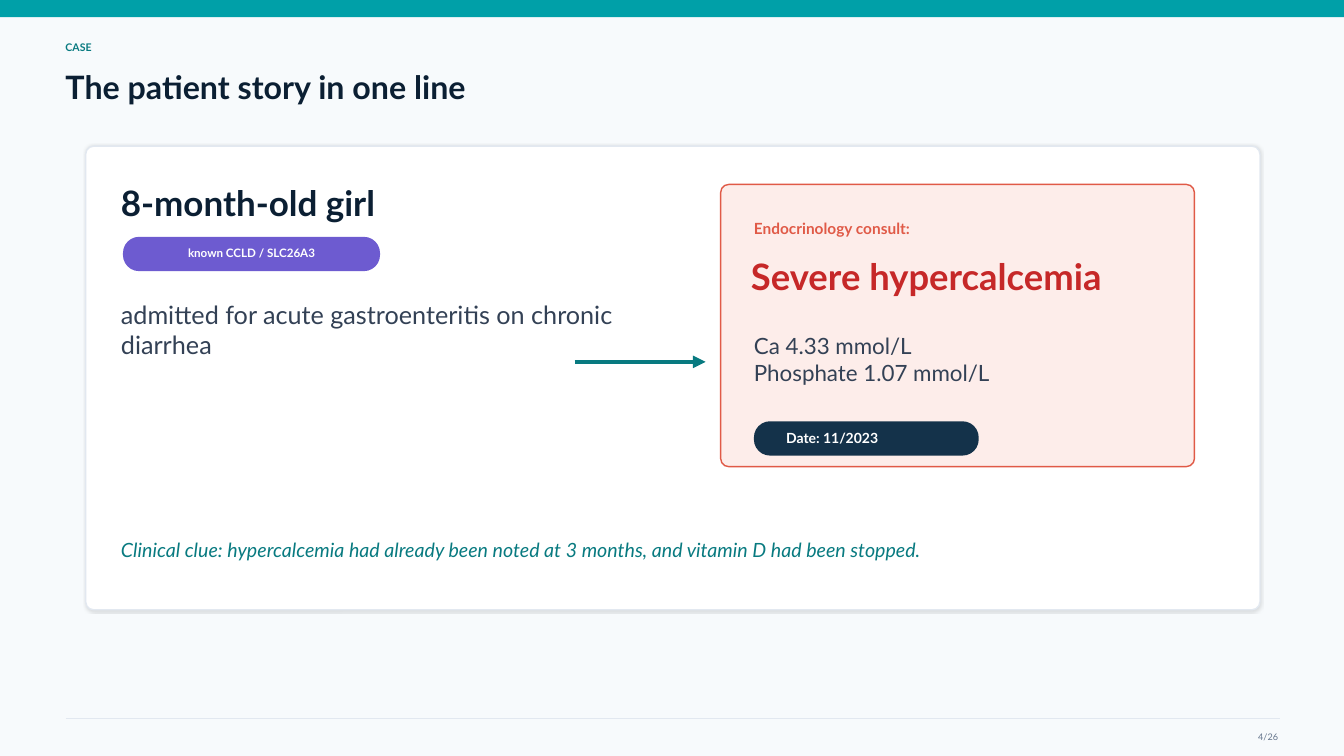
from lxml.etree import SubElement
from pptx import Presentation
from pptx.dml.color import RGBColor
from pptx.enum.shapes import MSO_CONNECTOR, MSO_SHAPE
from pptx.enum.text import MSO_ANCHOR, PP_ALIGN
from pptx.oxml.ns import qn
from pptx.util import Pt

FONT = "Lato"
PAPER = RGBColor(0xF7, 0xFA, 0xFC)
WHITE = RGBColor(0xFF, 0xFF, 0xFF)
AQUA = RGBColor(0x00, 0xA0, 0xA8)
TEAL = RGBColor(0x08, 0x7A, 0x80)
INK = RGBColor(0x0B, 0x1F, 0x33)
SLATE = RGBColor(0x33, 0x41, 0x55)
GRAY = RGBColor(0x64, 0x74, 0x8B)
RULE = RGBColor(0xE2, 0xE8, 0xF0)
PURPLE = RGBColor(0x6D, 0x5B, 0xD0)
NAVY = RGBColor(0x14, 0x32, 0x4A)
BLUSH = RGBColor(0xFD, 0xED, 0xEA)
CORAL = RGBColor(0xE0, 0x5A, 0x47)
RED = RGBColor(0xC6, 0x28, 0x28)


def add_text(slide, text, left, top, width, height, size, color,
             bold=False, italic=False, align=PP_ALIGN.LEFT):
    box = slide.shapes.add_textbox(Pt(left), Pt(top), Pt(width), Pt(height))
    frame = box.text_frame
    frame.word_wrap = True
    frame.vertical_anchor = MSO_ANCHOR.MIDDLE
    frame.margin_left = frame.margin_right = 0
    frame.margin_top = frame.margin_bottom = 0
    frame.text = text
    for para in frame.paragraphs:
        para.alignment = align
        font = para.font
        font.name, font.size = FONT, Pt(size)
        font.bold, font.italic = bold, italic
        font.color.rgb = color


def add_panel(slide, left, top, width, height, fill, line=None, radius=0):
    kind = MSO_SHAPE.ROUNDED_RECTANGLE if radius else MSO_SHAPE.RECTANGLE
    panel = slide.shapes.add_shape(kind, Pt(left), Pt(top), Pt(width), Pt(height))
    if radius:
        panel.adjustments[0] = radius / min(width, height)
    panel.fill.solid()
    panel.fill.fore_color.rgb = fill
    if line is None:
        panel.line.fill.background()
    else:
        panel.line.color.rgb = line
        panel.line.width = Pt(1)
    panel.shadow.inherit = False
    return panel


def add_shadow(panel):
    effects = panel._element.spPr.find(qn("a:effectLst"))
    shadow = SubElement(effects, qn("a:outerShdw"), blurRad=str(Pt(1.5)),
                        dist=str(Pt(0.7)), dir=str(45 * 60000),
                        algn="tl", rotWithShape="0")
    color = SubElement(shadow, qn("a:srgbClr"), val="000000")
    SubElement(color, qn("a:alpha"), val="12000")


def add_pill(slide, text, left, top, width, span, size, fill):
    add_panel(slide, left, top, width, 24.5, fill, radius=11.5)
    add_text(slide, text, left + 5.76, top + 5.04, span, 12.96, size, WHITE,
             bold=True, align=PP_ALIGN.CENTER)


def add_line(slide, left, right, top, color, width, arrow=False):
    line = slide.shapes.add_connector(
        MSO_CONNECTOR.STRAIGHT, Pt(left), Pt(top), Pt(right), Pt(top))
    line.line.color.rgb = color
    line.line.width = Pt(width)
    if arrow:
        SubElement(line.line._get_or_add_ln(), qn("a:tailEnd"), type="triangle")
    SubElement(line._element.spPr, qn("a:effectLst"))


def add_frame(slide):
    slide.background.fill.solid()
    slide.background.fill.fore_color.rgb = PAPER
    add_panel(slide, 0, 0, 960, 12.24, AQUA)
    add_text(slide, "CASE", 46.8, 24.48, 187.2, 18, 7.5, TEAL, bold=True)
    add_text(slide, "The patient story in one line",
             46.8, 41.04, 777.6, 41.76, 23, INK, bold=True)
    add_line(slide, 46.8, 914.4, 513.36, RULE, 1)
    add_text(slide, "4/26", 869.76, 519.84, 43.2, 12.96, 6.5, GRAY,
             align=PP_ALIGN.RIGHT)


def add_story(slide):
    card = add_panel(slide, 61.2, 104.4, 838.8, 331.2, WHITE, RULE, 5.76)
    add_shadow(card)
    add_text(slide, "8-month-old girl", 86.4, 131.04, 244.8, 27.36, 25, INK,
             bold=True)
    add_pill(slide, "known CCLD / SLC26A3", 87.84, 169.2, 183.6, 172.08, 8.3,
             PURPLE)
    add_text(slide, "admitted for acute gastroenteritis on chronic diarrhea",
             86.4, 211.68, 367.2, 46.8, 18, SLATE)
    add_line(slide, 410.4, 504, 258.48, TEAL, 3, arrow=True)


def add_consult(slide):
    add_panel(slide, 514.8, 131.76, 338.4, 201.6, BLUSH, CORAL, 5.76)
    add_text(slide, "Endocrinology consult:", 538.56, 154.08, 266.4, 18, 11,
             CORAL, bold=True)
    add_text(slide, "Severe hypercalcemia", 536.4, 181.44, 277.2, 30.96, 26,
             RED, bold=True)
    add_text(slide, "Ca 4.33 mmol/L\nPhosphate 1.07 mmol/L",
             538.56, 234, 273.6, 44.64, 16, SLATE)
    add_pill(slide, "Date: 11/2023", 538.56, 300.96, 160.56, 100.08, 10, NAVY)


def main():
    deck = Presentation()
    deck.slide_width, deck.slide_height = Pt(960), Pt(540)
    slide = deck.slides.add_slide(deck.slide_layouts[6])
    add_frame(slide)
    add_story(slide)
    add_consult(slide)
    add_text(slide, "Clinical clue: hypercalcemia had already been noted at "
             "3 months, and vitamin D had been stopped.",
             86.4, 380.16, 748.8, 24.48, 14, TEAL, italic=True)
    deck.save("out.pptx")


if __name__ == "__main__":
    main()
